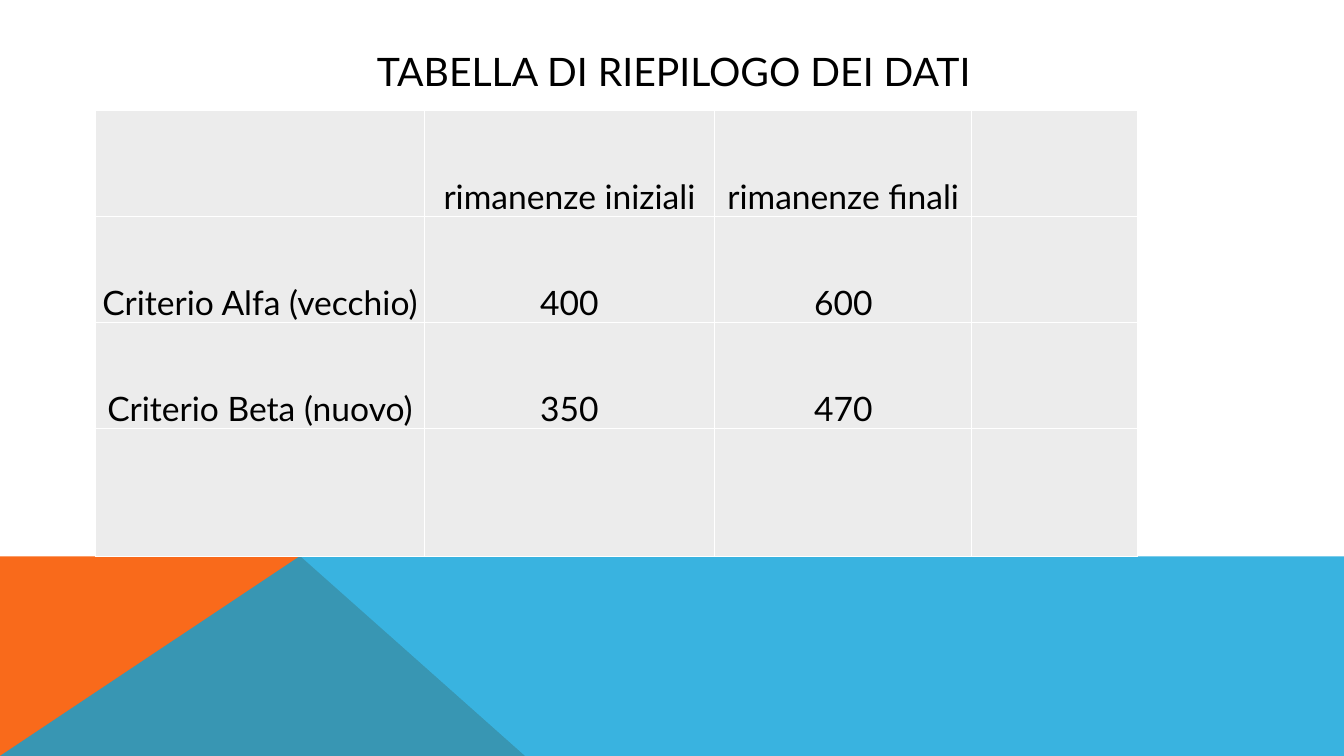
"""Build a slide with a summary table of opening and closing stock."""
import lxml.etree
import pptx
import pptx.dml.color
import pptx.enum.text
import pptx.oxml.ns
import pptx.util
from pptx.util import Cm

BLACK = pptx.dml.color.RGBColor(0x00, 0x00, 0x00)
WHITE = pptx.dml.color.RGBColor(0xFF, 0xFF, 0xFF)
GREY = pptx.dml.color.RGBColor(0xEC, 0xEC, 0xEC)
ORANGE = pptx.dml.color.RGBColor(0xF9, 0x6A, 0x1B)
BLUE = pptx.dml.color.RGBColor(0x08, 0xA1, 0xD9)
FONT = "Lato"
qn = pptx.oxml.ns.qn


def write_centred(frame, text, size):
    frame.text = text
    paragraph = frame.paragraphs[0]
    paragraph.alignment = pptx.enum.text.PP_ALIGN.CENTER
    for run in paragraph.runs:
        run.font.name = FONT
        run.font.size = pptx.util.Pt(size)
        run.font.color.rgb = BLACK


presentation = pptx.Presentation()
presentation.slide_width = Cm(33.87)
presentation.slide_height = Cm(19.05)
slide = presentation.slides.add_slide(presentation.slide_layouts[6])

band_top, band_bottom = 14.02, 19.05
orange_points = [(0, band_bottom), (0, band_top), (7.57, band_top), (13.23, band_bottom)]
blue_points = [(0, band_bottom), (7.55, band_top), (33.87, band_top), (33.87, band_bottom)]
for points, colour, opacity in [(orange_points, ORANGE, 100), (blue_points, BLUE, 80)]:
    corners = [(Cm(x), Cm(y)) for x, y in points]
    builder = slide.shapes.build_freeform(*corners[0])
    builder.add_line_segments(corners[1:], close=True)
    band = builder.convert_to_shape()
    band.shadow.inherit = False
    band.line.fill.background()
    band.fill.solid()
    band.fill.fore_color.rgb = colour
    if opacity < 100:
        tint = band.fill._xPr.find(qn("a:solidFill"))[0]
        lxml.etree.SubElement(tint, qn("a:alpha")).set("val", str(opacity * 1000))

title = slide.shapes.add_textbox(Cm(3.05), Cm(1.02), Cm(27.86), Cm(1.52))
title.text_frame.word_wrap = True
title.text_frame.vertical_anchor = pptx.enum.text.MSO_ANCHOR.MIDDLE
write_centred(title.text_frame, "TABELLA DI RIEPILOGO DEI DATI", 28)

rows = [
    ["", "rimanenze iniziali", "rimanenze finali", ""],
    ["Criterio Alfa (vecchio)", "400", "600", ""],
    ["Criterio Beta (nuovo)", "350", "470", ""],
    ["", "", "", ""],
]
column_widths = [8.28, 7.32, 6.48, 4.17]
row_heights = [2.67, 2.67, 2.67, 3.23]
summary = slide.shapes.add_table(
    len(rows), len(column_widths), Cm(2.41), Cm(2.79),
    Cm(sum(column_widths)), Cm(sum(row_heights)),
).table
for column, width in zip(summary.columns, column_widths):
    column.width = Cm(width)
for row, height, texts in zip(summary.rows, row_heights, rows):
    row.height = Cm(height)
    for cell, text in zip(row.cells, texts):
        cell.margin_left = cell.margin_right = cell.margin_top = Cm(0.03)
        cell.margin_bottom = Cm(0)
        cell.vertical_anchor = pptx.enum.text.MSO_ANCHOR.BOTTOM
        write_centred(cell.text_frame, text, 24)
        properties = cell._tc.get_or_add_tcPr()
        for side in ("lnL", "lnR", "lnT", "lnB"):
            border = lxml.etree.SubElement(properties, qn(f"a:{side}"), w=str(pptx.util.Pt(1)))
            border_fill = lxml.etree.SubElement(border, qn("a:solidFill"))
            lxml.etree.SubElement(border_fill, qn("a:srgbClr"), val=str(WHITE))
        cell.fill.solid()
        cell.fill.fore_color.rgb = GREY

presentation.save("out.pptx")
